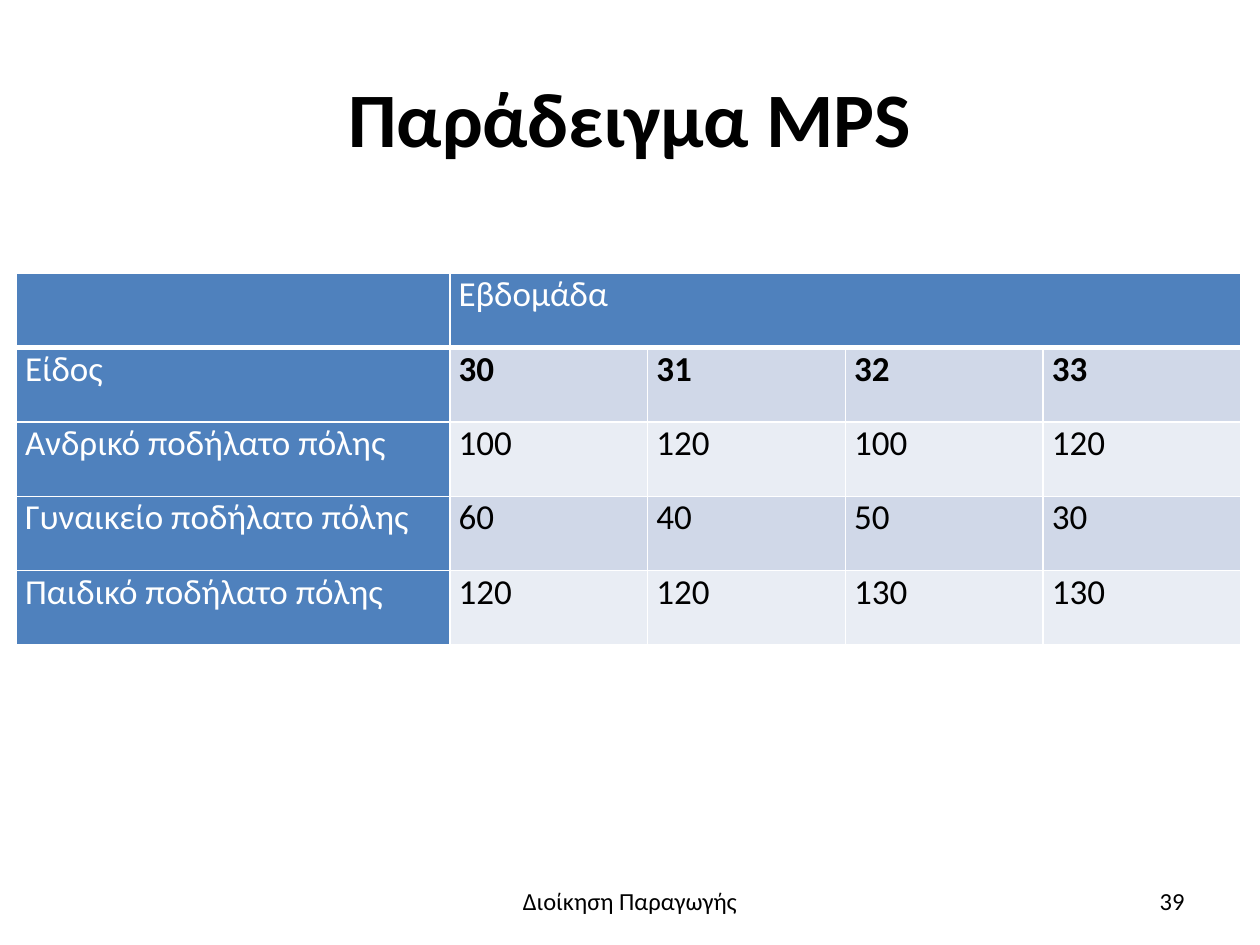
import pptx
import pptx.util
import pptx.dml.color
import pptx.enum.text
import pptx.oxml.ns
import lxml.etree

Inches = pptx.util.Inches
Pt = pptx.util.Pt
ALIGN = pptx.enum.text.PP_ALIGN
ANCHOR = pptx.enum.text.MSO_ANCHOR
qn = pptx.oxml.ns.qn

WIDTH, HEIGHT = 10, 7.5
FONT = "Calibri"
COLORS = {"text": "000000", "white": "FFFFFF", "head": "4F81BD",
          "dark_band": "D0D8E8", "light_band": "E9EDF4"}

TITLE = "Παράδειγμα MPS"
FOOTER = "Διοίκηση Παραγωγής"
NUMBER = "39"
ROWS = [
    ["", "Εβδομάδα", "", "", ""],
    ["Είδος", "30", "31", "32", "33"],
    ["Ανδρικό ποδήλατο πόλης", "100", "120", "100", "120"],
    ["Γυναικείο ποδήλατο πόλης", "60", "40", "50", "30"],
    ["Παιδικό ποδήλατο πόλης", "120", "120", "130", "130"],
]
TABLE_LEFT, TABLE_TOP = 0.13, 2.17
COL_WIDTHS = [3.44] + [1.57] * 4
ROW_HEIGHT = 0.59
FOOT_TOP, FOOT_HEIGHT = 6.95, 0.4
MARGIN = WIDTH * 0.05


def rgb(name):
    return pptx.dml.color.RGBColor.from_string(COLORS[name])


def write(tf, text, size=20, color="text", bold=False, align=ALIGN.JUSTIFY):
    p = tf.paragraphs[0]
    p.alignment = align
    r = p.add_run()
    r.text = text
    r.font.name = FONT
    r.font.size = Pt(size)
    r.font.bold = bold
    r.font.color.rgb = rgb(color)


def add_text(slide, text, box, **style):
    sp = slide.shapes.add_textbox(*[Inches(v) for v in box])
    tf = sp.text_frame
    tf.word_wrap = True
    tf.vertical_anchor = ANCHOR.MIDDLE
    write(tf, text, **style)


def set_borders(cell, **widths):
    tc_pr = cell._tc.get_or_add_tcPr()
    for side in "LRTB":
        ln = lxml.etree.SubElement(tc_pr, qn("a:ln" + side),
                                   w=str(Pt(widths.get(side, 1))))
        fill = lxml.etree.SubElement(ln, qn("a:solidFill"))
        lxml.etree.SubElement(fill, qn("a:srgbClr"), val=COLORS["white"])


def add_schedule(slide):
    box = (TABLE_LEFT, TABLE_TOP, sum(COL_WIDTHS), ROW_HEIGHT * len(ROWS))
    table = slide.shapes.add_table(len(ROWS), len(COL_WIDTHS),
                                   *[Inches(v) for v in box]).table
    for column, width in zip(table.columns, COL_WIDTHS):
        column.width = Inches(width)
    for i, row in enumerate(ROWS):
        table.rows[i].height = Inches(ROW_HEIGHT)
        for j, text in enumerate(row):
            cell = table.cell(i, j)
            is_head = i == 0 or j == 0
            band = "dark_band" if i % 2 else "light_band"
            set_borders(cell, B=3 if i == 0 else 1)
            cell.fill.solid()
            cell.fill.fore_color.rgb = rgb("head" if is_head else band)
            cell.margin_left = cell.margin_right = Inches(0.07)
            cell.margin_top = cell.margin_bottom = 0
            if text:
                write(cell.text_frame, text, color="white" if is_head else "text",
                      bold=i == 1 and j > 0)
    table.cell(0, 1).merge(table.cell(0, len(COL_WIDTHS) - 1))


def main():
    prs = pptx.Presentation()
    prs.slide_width, prs.slide_height = Inches(WIDTH), Inches(HEIGHT)
    slide = prs.slides.add_slide(prs.slide_layouts[6])
    add_text(slide, TITLE, (MARGIN, HEIGHT * 0.04, WIDTH - 2 * MARGIN, 1.25),
             size=44, bold=True, align=ALIGN.CENTER)
    add_schedule(slide)
    footer_width, number_width = 3.17, 2.33
    add_text(slide, FOOTER,
             ((WIDTH - footer_width) / 2, FOOT_TOP, footer_width, FOOT_HEIGHT),
             size=14, align=ALIGN.CENTER)
    add_text(slide, NUMBER,
             (WIDTH - MARGIN - number_width, FOOT_TOP, number_width, FOOT_HEIGHT),
             size=14, align=ALIGN.RIGHT)
    prs.save("out.pptx")


if __name__ == "__main__":
    main()
